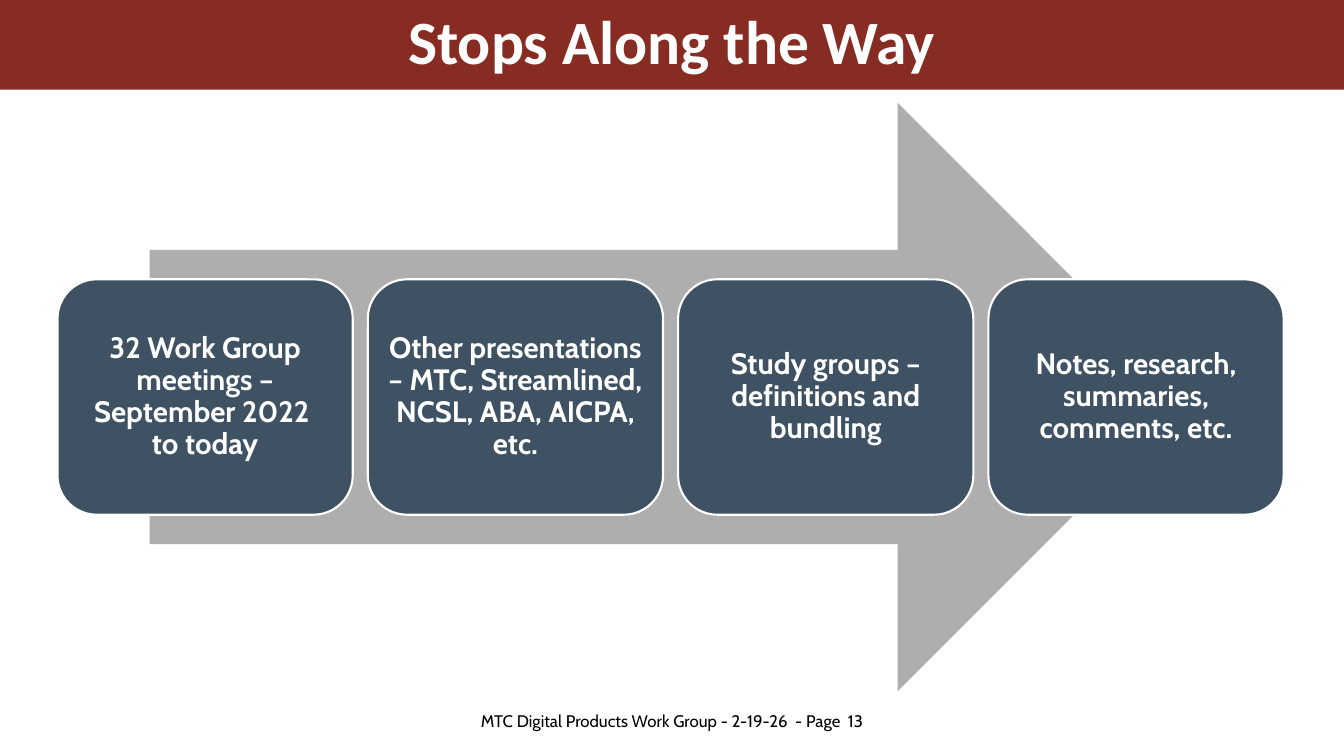
from dataclasses import dataclass

from pptx import Presentation
from pptx.dml.color import RGBColor as Color
from pptx.enum.shapes import MSO_SHAPE as Shape
from pptx.enum.text import MSO_ANCHOR as Anchor, MSO_AUTO_SIZE as AutoSize, PP_ALIGN as Align
from pptx.util import Cm, Pt


@dataclass(frozen=True)
class Theme:
    banner: Color = Color.from_string("862C22")
    arrow: Color = Color.from_string("AEAEAE")
    card: Color = Color.from_string("3F5263")
    light: Color = Color.from_string("FFFFFF")
    dark: Color = Color.from_string("000000")
    heading_font: str = "Calibri"
    body_font: str = "Cabin"
    title_size: int = 44
    card_size: int = 21
    footer_size: int = 12
    card_border: float = 1.5


@dataclass(frozen=True)
class Box:
    left: float
    top: float
    width: float
    height: float

    def lengths(self):
        return Cm(self.left), Cm(self.top), Cm(self.width), Cm(self.height)


THEME = Theme()
PAGE_WIDTH, PAGE_HEIGHT = 33.87, 19.05
CARD_GAP = 0.38
CARD_INSET = 0.23
STOPS = [
    "32 Work Group meetings – September 2022 \vto today",
    "Other presentations – MTC, Streamlined, NCSL, ABA, AICPA, etc.",
    "Study groups – definitions and bundling",
    "Notes, research, summaries, comments, etc.",
]


def write_text(shape, text, font_name, size, color, bold=False, line_spacing=1.0):
    frame = shape.text_frame
    frame.word_wrap = True
    frame.auto_size = AutoSize.NONE
    frame.vertical_anchor = Anchor.MIDDLE
    frame.text = text
    para = frame.paragraphs[0]
    para.alignment = Align.CENTER
    para.line_spacing = line_spacing
    para.font.name = font_name
    para.font.size = Pt(size)
    para.font.bold = bold
    para.font.color.rgb = color


def add_filled_shape(page, kind, box, color):
    shape = page.shapes.add_shape(kind, *box.lengths())
    shape.shadow.inherit = False
    shape.fill.solid()
    shape.fill.fore_color.rgb = color
    shape.line.fill.background()
    return shape


def place_title(page, box, text):
    title = page.shapes.title
    title.left, title.top, title.width, title.height = box.lengths()
    title.fill.solid()
    title.fill.fore_color.rgb = THEME.banner
    write_text(title, text, THEME.heading_font, THEME.title_size, THEME.light, True, 0.9)


def add_card(page, box, text):
    card = add_filled_shape(page, Shape.ROUNDED_RECTANGLE, box, THEME.card)
    card.line.color.rgb = THEME.light
    card.line.width = Pt(THEME.card_border)
    frame = card.text_frame
    frame.margin_left = frame.margin_right = Cm(CARD_INSET)
    frame.margin_top = frame.margin_bottom = Cm(CARD_INSET)
    write_text(card, text, THEME.body_font, THEME.card_size, THEME.light, True, 0.9)


def add_process(page, box, stops):
    arrow_width = box.width * 0.85
    arrow_left = box.left + (box.width - arrow_width) / 2
    arrow_box = Box(arrow_left, box.top, arrow_width, box.height)
    add_filled_shape(page, Shape.RIGHT_ARROW, arrow_box, THEME.arrow)

    card_width = (box.width - CARD_GAP * (len(stops) - 1)) / len(stops)
    card_height = box.height * 0.4
    card_top = box.top + (box.height - card_height) / 2
    for index, stop in enumerate(stops):
        card_left = box.left + index * (card_width + CARD_GAP)
        add_card(page, Box(card_left, card_top, card_width, card_height), stop)


def add_footer(page, box, text):
    footer = page.shapes.add_textbox(*box.lengths())
    write_text(footer, text, THEME.body_font, THEME.footer_size, THEME.dark)


def main():
    deck = Presentation()
    deck.slide_width, deck.slide_height = Cm(PAGE_WIDTH), Cm(PAGE_HEIGHT)
    page = deck.slides.add_slide(deck.slide_layouts.get_by_name("Title Only"))
    place_title(page, Box(0, 0, PAGE_WIDTH, 2.26), "Stops Along the Way")
    add_process(page, Box(1.45, 2.59, 30.9, 14.83), STOPS)
    add_footer(page, Box(11.23, 17.65, 11.43, 1.02),
               "MTC Digital Products Work Group - 2-19-26  - Page  13")
    deck.save("out.pptx")


if __name__ == "__main__":
    main()
